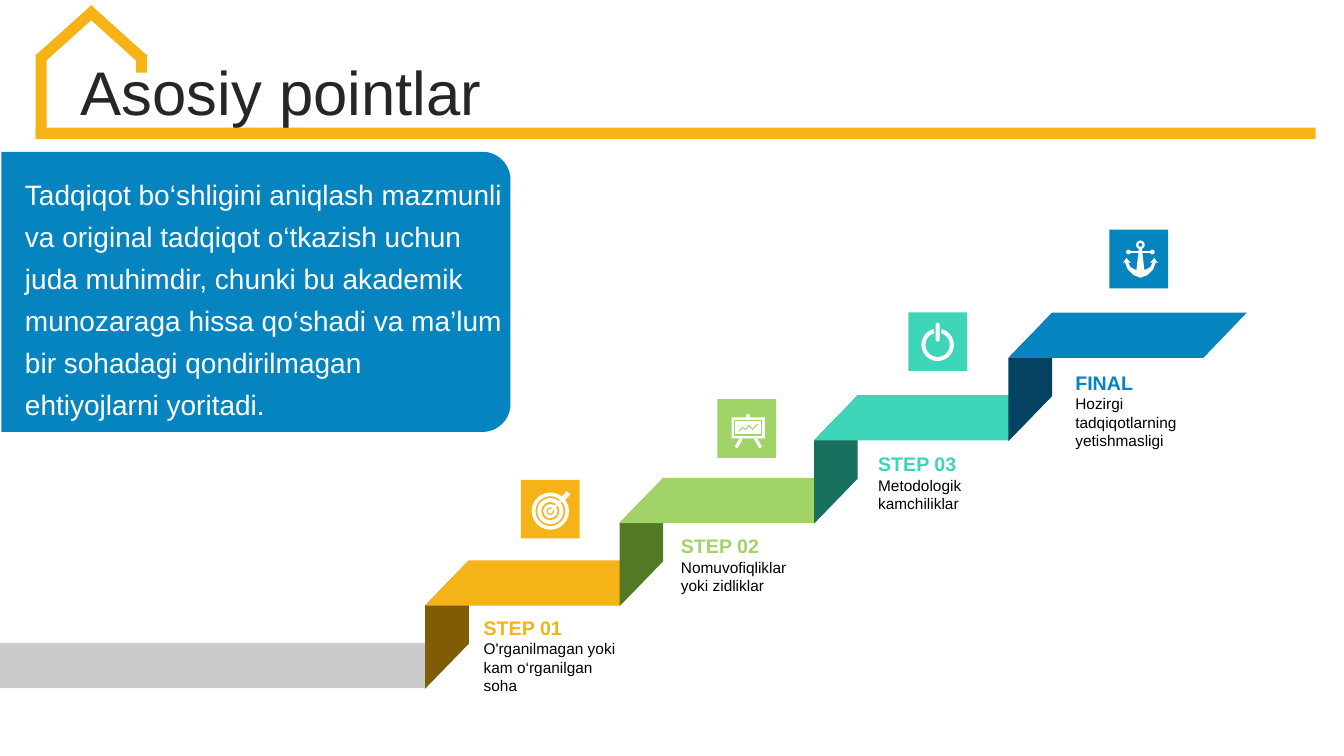
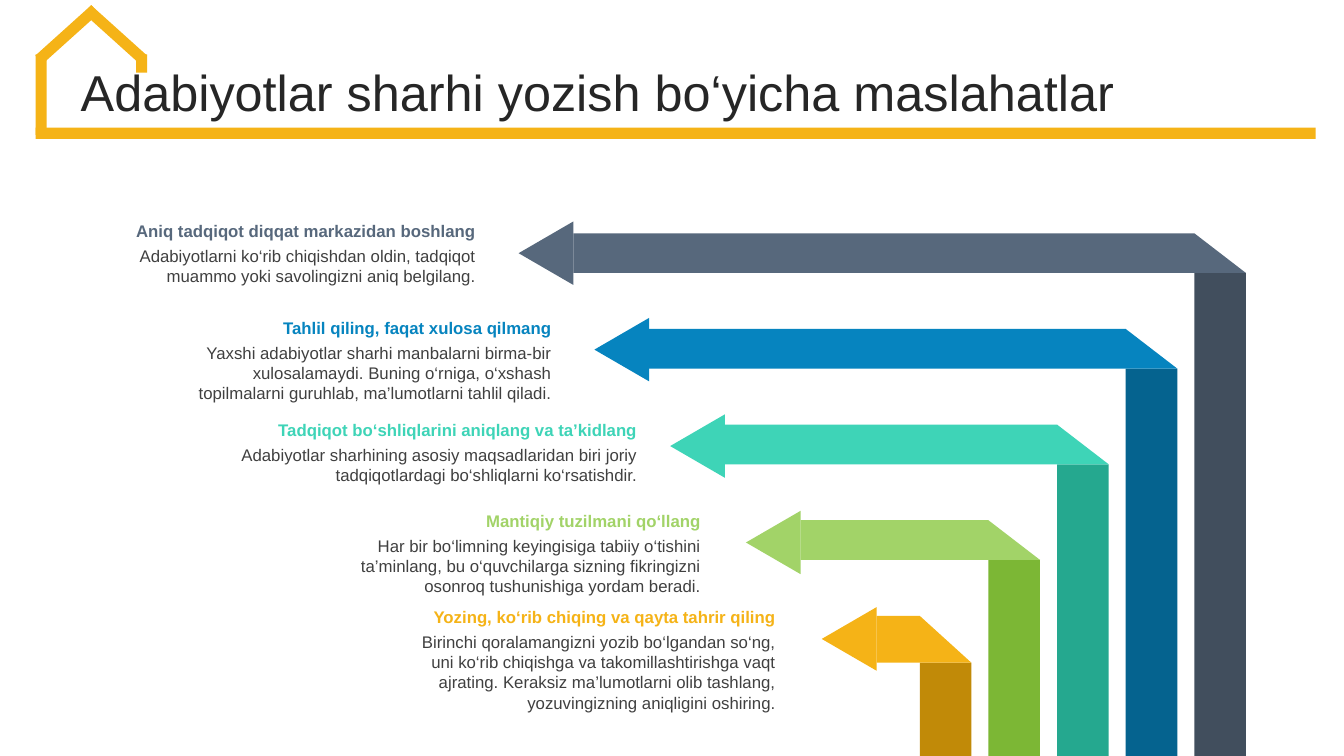
from lxml import etree
from pptx import Presentation
from pptx.dml.color import RGBColor
from pptx.enum import shapes, text
from pptx.oxml.ns import qn
from pptx.util import Cm, Pt

FONT = "Arial"
WHITE = RGBColor(0xFF, 0xFF, 0xFF)
BLACK = RGBColor(0x00, 0x00, 0x00)
TITLE_INK = RGBColor(0x26, 0x26, 0x26)
BODY_INK = RGBColor(0x40, 0x40, 0x40)
GROUND = RGBColor(0xCB, 0xCB, 0xCB)
AMBER = RGBColor(0xF5, 0xB3, 0x17)
AMBER_STEP = RGBColor(0x80, 0x5C, 0x06)
AMBER_POST = RGBColor(0xC1, 0x8A, 0x08)
GREEN = RGBColor(0xA2, 0xD3, 0x68)
GREEN_STEP = RGBColor(0x52, 0x7A, 0x24)
GREEN_POST = RGBColor(0x7C, 0xB7, 0x35)
TEAL = RGBColor(0x3E, 0xD4, 0xB7)
TEAL_STEP = RGBColor(0x19, 0x70, 0x5F)
TEAL_POST = RGBColor(0x25, 0xA8, 0x8F)
BLUE = RGBColor(0x06, 0x84, 0xBF)
BLUE_STEP = RGBColor(0x03, 0x42, 0x60)
BLUE_POST = RGBColor(0x05, 0x63, 0x8F)
SLATE = RGBColor(0x57, 0x68, 0x7C)
SLATE_POST = RGBColor(0x41, 0x4E, 0x5D)

SLIDE_WIDTH, SLIDE_HEIGHT = 33.87, 19.05
KIND = shapes.MSO_SHAPE

HOUSE_FRAME = [
    ((0.9, 3.22, 32.26, 0.28), 0),
    ((0.9, 1.37, 0.28, 2.03), 0),
    ((3.43, 1.37, 0.28, 0.46), 0),
    ((1.55, -0.08, 0.28, 1.9), 48),
    ((2.77, -0.08, 0.28, 1.9), 312),
]

INTRO = (
    "Tadqiqot bo‘shligini aniqlash mazmunli va original tadqiqot o‘tkazish uchun "
    "juda muhimdir, chunki bu akademik munozaraga hissa qo‘shadi va ma’lum bir "
    "sohadagi qondirilmagan ehtiyojlarni yoritadi."
)

TIPS = [
    ("Aniq tadqiqot diqqat markazidan boshlang",
     "Adabiyotlarni ko‘rib chiqishdan oldin, tadqiqot muammo yoki savolingizni "
     "aniq belgilang.",
     SLATE, SLATE_POST, 12.24, 5.44, 10.54, 1.0),
    ("Tahlil qiling, faqat xulosa qilmang",
     "Yaxshi adabiyotlar sharhi manbalarni birma-bir xulosalamaydi. Buning o‘rniga, "
     "o‘xshash topilmalarni guruhlab, ma’lumotlarni tahlil qiladi.",
     BLUE, BLUE_POST, 14.15, 7.87, 9.96, 1.0),
    ("Tadqiqot bo‘shliqlarini aniqlang va ta’kidlang",
     "Adabiyotlar sharhining asosiy maqsadlaridan biri joriy tadqiqotlardagi "
     "bo‘shliqlarni ko‘rsatishdir.",
     TEAL, TEAL_POST, 16.31, 10.44, 10.54, 1.0),
    ("Mantiqiy tuzilmani qo‘llang",
     "Har bir bo‘limning keyingisiga tabiiy o‘tishini ta’minlang, bu o‘quvchilarga "
     "sizning fikringizni osonroq tushunishiga yordam beradi.",
     GREEN, GREEN_POST, 17.91, 12.73, 10.54, 1.0),
    ("Yozing, ko‘rib chiqing va qayta tahrir qiling",
     "Birinchi qoralamangizni yozib bo‘lgandan so‘ng, uni ko‘rib chiqishga va "
     "takomillashtirishga vaqt ajrating. Keraksiz ma’lumotlarni olib tashlang, "
     "yozuvingizning aniqligini oshiring.",
     AMBER, AMBER_POST, 19.8, 15.16, 9.55, 1.18),
]


def block(slide, kind, box, color, rotation=0, adjustments=()):
    shape = slide.shapes.add_shape(kind, *map(Cm, box))
    shape.shadow.inherit = False
    shape.fill.solid()
    shape.fill.fore_color.rgb = color
    shape.line.fill.background()
    shape.rotation = rotation
    for index, value in enumerate(adjustments):
        shape.adjustments[index] = value
    return shape


def disc(slide, x, y, radius, color, kind=KIND.OVAL, adjustments=()):
    box = (x - radius, y - radius, 2 * radius, 2 * radius)
    return block(slide, kind, box, color, adjustments=adjustments)


def outline(slide, points, close=True):
    corners = [(Cm(x), Cm(y)) for x, y in points]
    builder = slide.shapes.build_freeform(*corners[0])
    builder.add_line_segments(corners[1:], close=close)
    shape = builder.convert_to_shape()
    shape.shadow.inherit = False
    return shape


def polygon(slide, points, color):
    shape = outline(slide, points)
    shape.fill.solid()
    shape.fill.fore_color.rgb = color
    shape.line.fill.background()


def stroke(slide, start, end, weight):
    line = slide.shapes.add_connector(
        shapes.MSO_CONNECTOR.STRAIGHT, *map(Cm, (*start, *end)))
    line.line.color.rgb = WHITE
    line.line.width = Pt(weight)
    etree.SubElement(line.element.spPr, qn("a:effectLst"))


def style(paragraph, size, color, bold=False):
    for run in paragraph.runs:
        run.font.name = FONT
        run.font.size = Pt(size)
        run.font.bold = bold
        run.font.color.rgb = color


def text_box(slide, box, inset):
    frame = slide.shapes.add_textbox(*map(Cm, box)).text_frame
    frame.word_wrap = True
    frame.margin_left = frame.margin_right = Cm(inset[0])
    frame.margin_top = frame.margin_bottom = Cm(inset[1])
    return frame


def caption(slide, box, heading, heading_style, body, body_style,
            inset=(0, 0), align=text.PP_ALIGN.LEFT, gap=0):
    frame = text_box(slide, box, inset)
    frame.text = heading
    detail = frame.add_paragraph()
    detail.text = body
    detail.space_before = Pt(gap)
    style(frame.paragraphs[0], *heading_style, bold=True)
    style(detail, *body_style)
    for paragraph in frame.paragraphs:
        paragraph.alignment = align


def prepare_layout(layout, slide):
    title = layout.placeholders[0]
    title.left, title.top, title.width, title.height = map(Cm, (1.78, 1.4, 31.27, 2.0))
    title.text_frame.vertical_anchor = text.MSO_ANCHOR.MIDDLE
    title.text_frame.auto_size = text.MSO_AUTO_SIZE.NONE
    for number, (box, rotation) in enumerate(HOUSE_FRAME, start=20):
        bar = block(slide, KIND.RECTANGLE, box, AMBER, rotation).element
        bar.nvSpPr.cNvPr.set("id", str(number))
        layout.shapes.element.append(bar)


def set_title(slide, wording, size):
    slide.shapes.title.text_frame.text = wording
    paragraph = slide.shapes.title.text_frame.paragraphs[0]
    paragraph.alignment = text.PP_ALIGN.LEFT
    paragraph.line_spacing = 0.9
    style(paragraph, size, TITLE_INK)


def target_icon(slide, x, y, color):
    y += 0.05
    for radius, thickness in ((0.47, 0.1), (0.33, 0.15), (0.18, 0.23)):
        disc(slide, x, y, radius, WHITE, KIND.DONUT, (thickness,))
    disc(slide, x, y, 0.06, WHITE)
    stroke(slide, (x, y), (x + 0.46, y - 0.46), 1.5)
    stroke(slide, (x + 0.32, y - 0.32), (x + 0.46, y - 0.46), 3.5)


def easel_icon(slide, x, y, color):
    block(slide, KIND.RECTANGLE, (x - 0.02, y - 0.36, 0.1, 0.1), WHITE)
    block(slide, KIND.RECTANGLE, (x - 0.38, y - 0.28, 0.84, 0.53), WHITE)
    border = block(slide, KIND.RECTANGLE, (x - 0.31, y - 0.2, 0.68, 0.37), WHITE)
    border.line.color.rgb = color
    border.line.width = Pt(1.2)
    trend = [(-0.2, 0.07), (-0.1, -0.03), (-0.03, 0.03),
             (0.05, -0.08), (0.15, 0.02), (0.28, -0.12)]
    chart_line = outline(slide, [(x + dx, y + dy) for dx, dy in trend], close=False)
    chart_line.fill.background()
    chart_line.line.color.rgb = color
    chart_line.line.width = Pt(0.75)
    for side in (-1, 1):
        middle = x + 0.04
        stroke(slide, (middle + side * 0.18, y + 0.25),
               (middle + side * 0.31, y + 0.48), 2.25)


def power_icon(slide, x, y, color):
    disc(slide, x, y + 0.08, 0.41, WHITE, KIND.BLOCK_ARC,
         (285 * 0.6, 255 * 0.6, 0.125))
    block(slide, KIND.ROUNDED_RECTANGLE, (x - 0.05, y - 0.48, 0.1, 0.48),
          WHITE, adjustments=(0.5,))


def anchor_icon(slide, x, y, color):
    x += 0.04
    disc(slide, x, y - 0.36, 0.11, WHITE, KIND.DONUT, (0.27,))
    stroke(slide, (x - 0.3, y - 0.18), (x + 0.3, y - 0.18), 1.4)
    for side in (-1, 1):
        disc(slide, x + side * 0.3, y - 0.18, 0.06, WHITE)
    half = [(-0.04, -0.25), (-0.1, 0.28), (-0.25, 0.2), (-0.31, 0.08),
            (-0.24, 0.1), (-0.35, -0.03), (-0.44, 0.1), (-0.39, 0.08),
            (-0.32, 0.26), (-0.18, 0.4), (0, 0.47)]
    mirrored = [(-dx, dy) for dx, dy in reversed(half[:-1])]
    polygon(slide, [(x + dx, y + dy) for dx, dy in half + mirrored], WHITE)


STEPS = [
    ("STEP 01", "O'rganilmagan yoki kam o‘rganilgan soha",
     AMBER, AMBER_STEP, (13.13, 12.09), target_icon),
    ("STEP 02", "Nomuvofiqliklar yoki zidliklar",
     GREEN, GREEN_STEP, (18.08, 10.06), easel_icon),
    ("STEP 03", "Metodologik kamchiliklar",
     TEAL, TEAL_STEP, (22.89, 7.87), power_icon),
    ("FINAL", "Hozirgi tadqiqotlarning yetishmasligi",
     BLUE, BLUE_STEP, (27.96, 5.79), anchor_icon),
]


def add_step(slide, index, heading, body, color, shade, tile, icon):
    x, y = 10.72 + 4.9 * index, 14.12 - 2.08 * index
    riser = block(slide, KIND.PARALLELOGRAM, (x - 1.07, y + 1.07, 3.23, 1.1),
                  shade, 270, (1.03,))
    riser.element.spPr.xfrm.set("flipH", "1")
    block(slide, KIND.PARALLELOGRAM, (x, y, 6, 1.14), color, adjustments=(0.96,))
    size = 1.48
    block(slide, KIND.RECTANGLE, (*tile, size, size), color)
    icon(slide, tile[0] + size / 2, tile[1] + size / 2, color)
    caption(slide, (12.19 + 4.97 * index, 15.52 - 2.06 * index, 3.4, 2),
            heading, (14, color), body, (11, BLACK))


def add_tip(slide, index, heading, body, color, shade, right, top, width, thickness):
    post_x, post_width = 30.1 - 1.73 * index, 1.3
    band_x, band_y = 14.45 + 1.91 * index, 5.88 + 2.41 * index
    bottom, end = band_y + thickness, post_x + post_width
    block(slide, KIND.RECTANGLE,
          (post_x, bottom, post_width, SLIDE_HEIGHT - bottom), shade)
    polygon(slide, [(band_x, band_y), (post_x, band_y), (end, bottom),
                    (band_x, bottom)], color)
    block(slide, KIND.ISOSCELES_TRIANGLE,
          (band_x - 1.49, 5.69 + 2.43 * index, 1.6, 1.38), color, 270)
    caption(slide, (right - width, top, width, 2), heading, (12, color),
            body, (12, BODY_INK), (0.25, 0.13), text.PP_ALIGN.RIGHT, 3.5)


def build_steps(slide):
    set_title(slide, "Asosiy pointlar", 44)
    block(slide, KIND.ROUND_2_SAME_RECTANGLE, (2.92, 0.94, 7.06, 12.83),
          BLUE, 90, (0.1, 0))
    intro = text_box(slide, (0.53, 4.27, 12.24, 6.3), (0.1, 0))
    intro.text = INTRO
    intro.paragraphs[0].line_spacing = Pt(30)
    style(intro.paragraphs[0], 20, WHITE)
    block(slide, KIND.RECTANGLE, (0, 16.2, 10.72, 1.14), GROUND)
    for index, step in enumerate(STEPS):
        add_step(slide, index, *step)


def build_tips(slide):
    set_title(slide, "Adabiyotlar sharhi yozish bo‘yicha maslahatlar", 36)
    for index, tip in enumerate(TIPS):
        add_tip(slide, index, *tip)


def main():
    deck = Presentation()
    deck.slide_width, deck.slide_height = Cm(SLIDE_WIDTH), Cm(SLIDE_HEIGHT)
    layout = deck.slide_layouts[5]
    steps, tips = (deck.slides.add_slide(layout) for _ in range(2))
    prepare_layout(layout, steps)
    build_steps(steps)
    build_tips(tips)
    deck.save("out.pptx")


if __name__ == "__main__":
    main()
